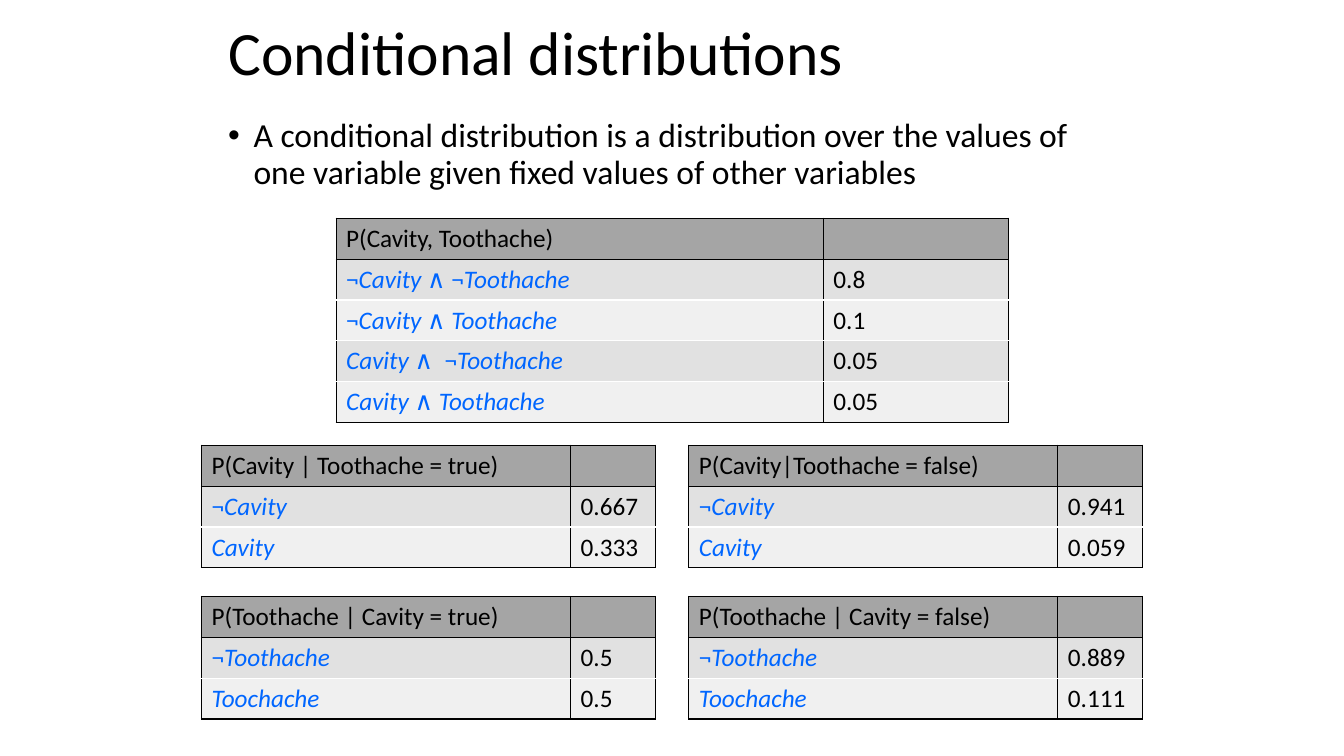
from itertools import groupby

from lxml import etree
from pptx import Presentation
from pptx import util as u
from pptx.dml import color
from pptx.enum import text
from pptx.oxml import ns

COLORS = {"black": "000000", "white": "FFFFFF", "blue": "0066FF",
          "header": "A5A5A5", "dark_band": "E1E1E1", "light_band": "F0F0F0"}
ROW_HEIGHT = 1.03


def add_run(p, words, size=18, fill="black", italic=False):
    r = p.add_run()
    r.text = words
    r.font.name = "Calibri"
    r.font.size = u.Pt(size)
    r.font.bold = False
    r.font.italic = italic
    r.font.color.rgb = color.RGBColor.from_string(COLORS[fill])


def format_cell(cell, fill, top, bottom):
    """Draw black side borders, the given top and bottom borders, and the fill."""
    tcPr = cell._tc.get_or_add_tcPr()
    for side, name in (("L", "black"), ("R", "black"), ("T", top), ("B", bottom)):
        ln = etree.SubElement(tcPr, ns.qn(f"a:ln{side}"), w=str(u.Pt(1)))
        solid = etree.SubElement(ln, ns.qn("a:solidFill"))
        etree.SubElement(solid, ns.qn("a:srgbClr"), val=COLORS[name])
    cell.fill.solid()
    cell.fill.fore_color.rgb = color.RGBColor.from_string(COLORS[fill])


prs = Presentation()
prs.slide_width, prs.slide_height = u.Cm(33.87), u.Cm(19.05)
s = prs.slides.add_slide(prs.slide_layouts[5])

# Title
title = s.shapes.title
title.left, title.top, title.width, title.height = u.Cm(5.5), u.Cm(0.2), u.Cm(22.86), u.Cm(2.41)
title.text_frame.vertical_anchor = text.MSO_ANCHOR.MIDDLE
p = title.text_frame.paragraphs[0]
p.alignment = text.PP_ALIGN.LEFT
p.line_spacing = 0.9
add_run(p, "Conditional distributions", size=44)

# Definition
definition = s.shapes.add_textbox(u.Cm(5.5), u.Cm(2.87), u.Cm(22.86), u.Cm(3.89))
tf = definition.text_frame
tf.word_wrap = True
p = tf.paragraphs[0]
pPr = p._p.get_or_add_pPr()
pPr.set("marL", str(u.Cm(0.64)))
pPr.set("indent", str(-u.Cm(0.64)))
etree.SubElement(pPr, ns.qn("a:buFont"), typeface="Arial")
etree.SubElement(pPr, ns.qn("a:buChar"), char="•")
p.line_spacing = 0.9
add_run(p, "A conditional distribution is a distribution over the values of "
           "one variable given fixed values of other variables", size=24)

# Probability tables: left, top, column widths, heading, rows
left, right = 5.08, 17.36
upper, lower = 11.22, 15.03
joint_cols, conditional_cols = (12.28, 4.66), (9.3, 2.13)
tables = [
    (8.47, 5.5, joint_cols, "P(Cavity, Toothache)",
     [("¬Cavity ∧ ¬Toothache", "0.8"), ("¬Cavity ∧ Toothache", "0.1"),
      ("Cavity ∧  ¬Toothache", "0.05"), ("Cavity ∧ Toothache", "0.05")]),
    (left, upper, conditional_cols, "P(Cavity | Toothache = true)",
     [("¬Cavity", "0.667"), ("Cavity", "0.333")]),
    (right, upper, conditional_cols, "P(Cavity|Toothache = false)",
     [("¬Cavity", "0.941"), ("Cavity", "0.059")]),
    (left, lower, conditional_cols, "P(Toothache | Cavity = true)",
     [("¬Toothache", "0.5"), ("Toochache", "0.5")]),
    (right, lower, conditional_cols, "P(Toothache | Cavity = false)",
     [("¬Toothache", "0.889"), ("Toochache", "0.111")]),
]

for x, y, widths, heading, rows in tables:
    count = len(rows) + 1
    table = s.shapes.add_table(count, 2, u.Cm(x), u.Cm(y), u.Cm(sum(widths)),
                               u.Cm(count * ROW_HEIGHT)).table
    table.horz_banding = False
    for column, width in zip(table.columns, widths):
        column.width = u.Cm(width)
    for row in table.rows:
        row.height = u.Cm(ROW_HEIGHT)

    add_run(table.cell(0, 0).text_frame.paragraphs[0], heading)
    for cell in table.rows[0].cells:
        format_cell(cell, "header", "black", "black")

    for i, (event, probability) in enumerate(rows, 1):
        event_cell, value_cell = table.rows[i].cells
        # Variable names are italic, logic symbols upright
        for is_name, chars in groupby(event, str.isalpha):
            add_run(event_cell.text_frame.paragraphs[0], "".join(chars),
                    fill="blue", italic=is_name)
        add_run(value_cell.text_frame.paragraphs[0], probability)
        for cell in (event_cell, value_cell):
            format_cell(cell, "dark_band" if i % 2 else "light_band",
                        "black" if i == 1 else "white",
                        "black" if i == len(rows) else "white")

prs.save("out.pptx")
